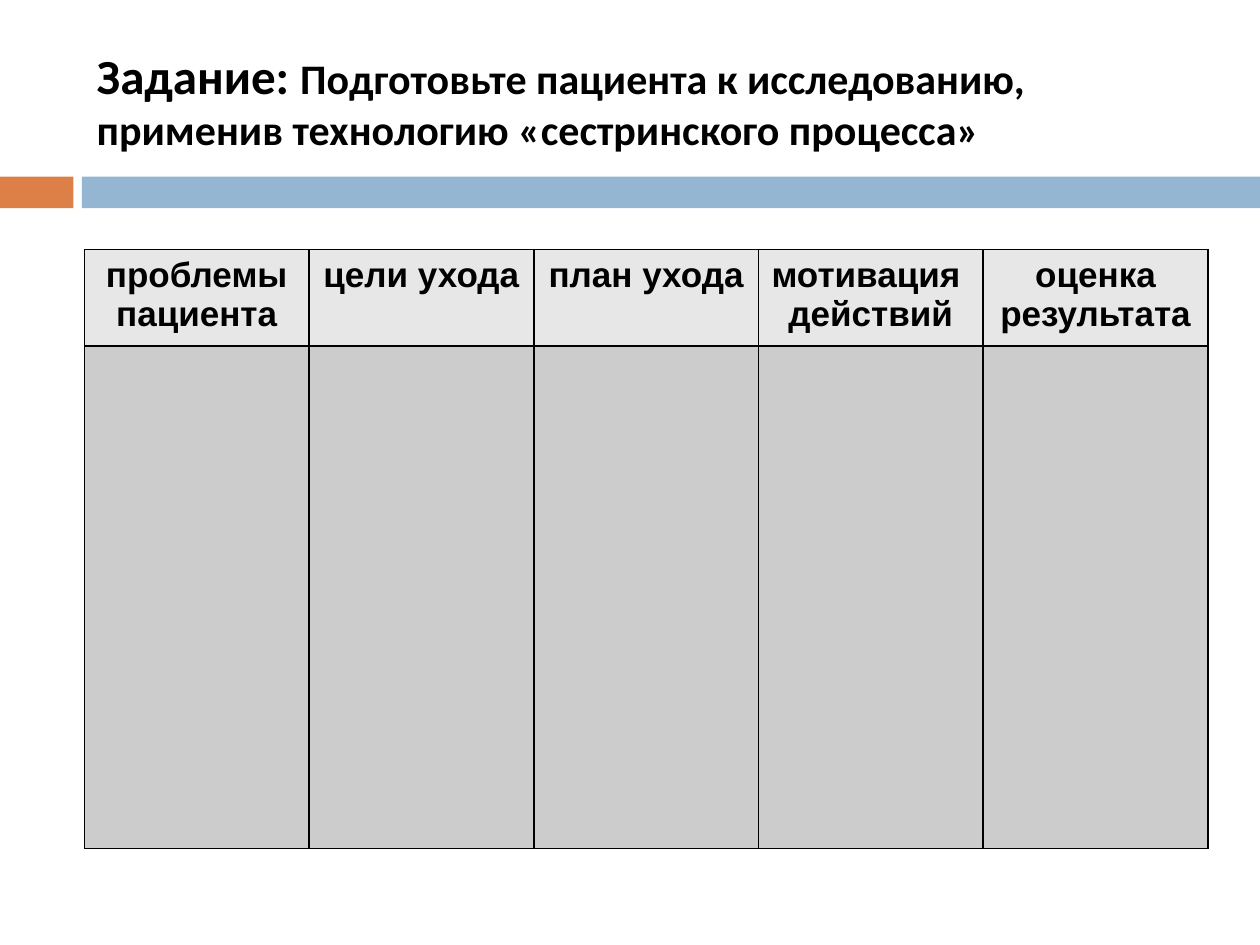
from pptx import Presentation
from pptx.dml.color import RGBColor as RGB
from pptx.enum.shapes import MSO_SHAPE as SHAPE
from pptx.enum.text import MSO_ANCHOR as ANCHOR, PP_ALIGN as ALIGN
from pptx.oxml import parse_xml
from pptx.util import Cm, Pt

HUES = {"text": "000000", "orange": "DD8047", "blue": "94B6D2",
        "head": "E7E7E7", "body": "CCCCCC", "edge": "000000"}
NS = "http://schemas.openxmlformats.org/drawingml/2006/main"


def add_run(para, text, size, font):
    run = para.add_run()
    run.text = text
    run.font.size = Pt(size)
    run.font.name = font
    run.font.bold = True
    run.font.color.rgb = RGB.from_string(HUES["text"])


def fill_cell(cell, hue):
    # Borders go before the fill in the cell properties
    props = cell._tc.get_or_add_tcPr()
    for side in ("lnL", "lnR", "lnT", "lnB"):
        props.append(parse_xml(
            f'<a:{side} xmlns:a="{NS}" w="12700"><a:solidFill>'
            f'<a:srgbClr val="{HUES["edge"]}"/></a:solidFill></a:{side}>'))
    cell.fill.solid()
    cell.fill.fore_color.rgb = RGB.from_string(HUES[hue])


deck = Presentation()
deck.slide_width, deck.slide_height = Cm(25.4), Cm(19.05)
slide = deck.slides.add_slide(deck.slide_layouts[6])

# Two-colour band under the title
for left, width, hue in ((0, 1.48, "orange"), (1.65, 23.75, "blue")):
    bar = slide.shapes.add_shape(SHAPE.RECTANGLE, Cm(left), Cm(3.56), Cm(width), Cm(0.64))
    bar.shadow.inherit = False
    bar.fill.solid()
    bar.fill.fore_color.rgb = RGB.from_string(HUES[hue])
    bar.line.fill.background()

# Title
box = slide.shapes.add_textbox(Cm(1.7), Cm(0.64), Cm(22.65), Cm(2.74))
frame = box.text_frame
frame.word_wrap = True
frame.vertical_anchor = ANCHOR.MIDDLE
para = frame.paragraphs[0]
add_run(para, "Задание: ", 28, "Calibri")
add_run(para, "Подготовьте пациента к исследованию, применив технологию "
              "«сестринского процесса»", 24, "Calibri")

# Care plan table: a heading row over an empty row to fill in
heads = [["проблемы пациента"], ["цели ухода"], ["план ухода"],
         ["мотивация ", "действий"], ["оценка результата"]]
table = slide.shapes.add_table(2, len(heads), Cm(1.7), Cm(5.03), Cm(22.65), Cm(11.98)).table
table.rows[0].height, table.rows[1].height = Cm(1.85), Cm(10.13)
for col, lines in enumerate(heads):
    table.columns[col].width = Cm(4.53)
    top = table.cell(0, col)
    fill_cell(top, "head")
    fill_cell(table.cell(1, col), "body")
    for num, line in enumerate(lines):
        frame = top.text_frame
        para = frame.add_paragraph() if num else frame.paragraphs[0]
        para.alignment = ALIGN.CENTER
        add_run(para, line, 20, "Arial")

deck.save("out.pptx")
